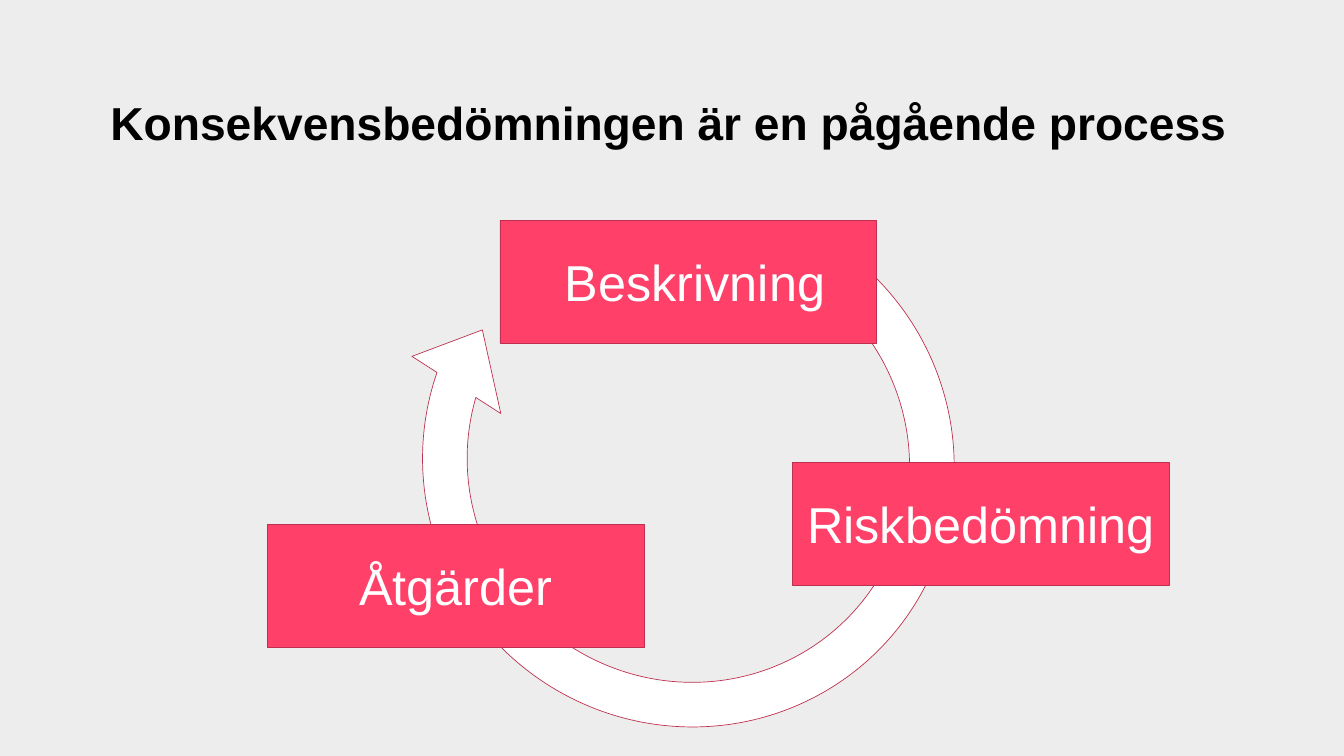
from pptx import Presentation
from pptx import util as u
from pptx.dml.color import RGBColor
from pptx.enum import shapes, text

WIDTH, HEIGHT = 26.67, 15
FONT = "Arial"
COLOURS = {
    "background": "EDEDED",
    "title": "000000",
    "step": "FF4069",
    "outline": "BD2F4E",
    "light": "FFFFFF",
}
STEP_SIZE = (7.47, 2.44)
STEPS = [
    (" Beskrivning", (9.92, 4.37)),
    ("Riskbedömning", (15.73, 9.17)),
    ("Åtgärder", (5.31, 10.4)),
]


def colour(name):
    return RGBColor.from_string(COLOURS[name])


def inches(box):
    return [u.Inches(length) for length in box]


def format_text(para, size, ink, align, bold=False):
    para.alignment = align
    font = para.font
    font.name, font.size, font.bold = FONT, u.Pt(size), bold
    font.color.rgb = colour(ink)


def add_title(page, box, wording):
    title = page.shapes.title
    title.left, title.top, title.width, title.height = inches(box)
    frame = title.text_frame
    frame.text = wording
    frame.word_wrap = True
    frame.auto_size = text.MSO_AUTO_SIZE.NONE
    frame.vertical_anchor = text.MSO_ANCHOR.BOTTOM
    frame.margin_left = frame.margin_right = frame.margin_top = frame.margin_bottom = 0
    format_text(frame.paragraphs[0], 66, "title", text.PP_ALIGN.LEFT, bold=True)


def add_outlined(page, kind, box, fill):
    shape = page.shapes.add_shape(kind, *inches(box))
    shape.shadow.inherit = False
    shape.fill.solid()
    shape.fill.fore_color.rgb = colour(fill)
    shape.line.color.rgb = colour("outline")
    shape.line.width = u.Pt(1)
    return shape


def add_cycle_arrow(page, box):
    arrow = add_outlined(page, shapes.MSO_SHAPE.CIRCULAR_ARROW, box, "light")
    arrow.rotation = 216
    for index, value in enumerate((0.076, 8.57, 205.48, 58.32, 0.09)):
        arrow.adjustments[index] = value


def add_step(page, box, wording):
    step = add_outlined(page, shapes.MSO_SHAPE.RECTANGLE, box, "step")
    frame = step.text_frame
    frame.text = wording
    frame.word_wrap = True
    frame.vertical_anchor = text.MSO_ANCHOR.MIDDLE
    format_text(frame.paragraphs[0], 72, "light", text.PP_ALIGN.CENTER)


def main():
    deck = Presentation()
    deck.slide_width, deck.slide_height = inches((WIDTH, HEIGHT))
    page = deck.slides.add_slide(deck.slide_layouts[5])
    page.background.fill.solid()
    page.background.fill.fore_color.rgb = colour("background")

    add_title(page, (2.19, 1.89, 24.14, 1.08),
              "Konsekvensbedömningen är en pågående process")
    add_cycle_arrow(page, (7.75, 3.35, 11.82, 11.65))
    for wording, corner in STEPS:
        add_step(page, corner + STEP_SIZE, wording)
    deck.save("out.pptx")


if __name__ == "__main__":
    main()
